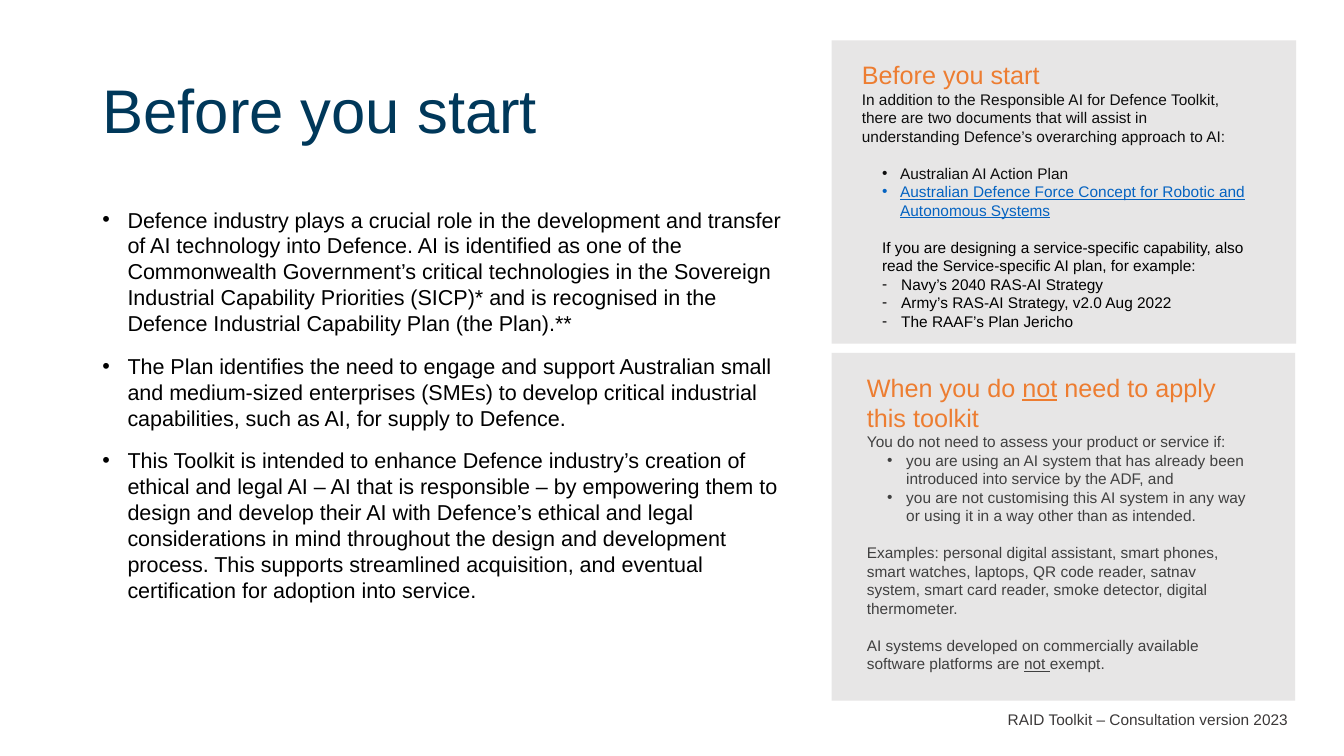
from pptx import Presentation
from pptx import util as u
from pptx.dml.color import RGBColor
from pptx.enum import shapes, text
from pptx.oxml.ns import qn
from lxml import etree

# Grid of 160 columns by 90 rows, with square cells
WIDTH, HEIGHT = u.Inches(13.333), u.Inches(7.5)
CELL = HEIGHT / 90

NAVY, ORANGE, PANEL = "00385A", "ED7D31", "E7E6E6"
BLACK, INK, GREY, FOOTER, LINK = "000000", "0D0D0D", "404040", "3B3838", "0563C1"
BLANK_LINE = {"space_before": u.Pt(13.2)}
NO_MARGINS = dict.fromkeys(
    ("margin_left", "margin_top", "margin_right", "margin_bottom"), 0)


def cells(n):
    return u.Emu(round(n * CELL))


def colour(target, value):
    target.rgb = RGBColor.from_string(value)


def apply(target, values):
    for name, value in values.items():
        setattr(target, name, value)


def indent(p, left, hang=0, bullet=None):
    pPr = p._p.get_or_add_pPr()
    pPr.set("marL", str(cells(left)))
    pPr.set("indent", str(-cells(hang)))
    if bullet:
        etree.SubElement(pPr, qn("a:buFont")).set("typeface", "Arial")
        etree.SubElement(pPr, qn("a:buChar")).set("char", bullet)


def write(tf, paragraphs):
    """Each paragraph is (runs, size, colour, indent, format)."""
    for i, (runs, size, ink, levels, values) in enumerate(paragraphs):
        p = tf.paragraphs[0] if i == 0 else tf.add_paragraph()
        if levels:
            indent(p, *levels)
        apply(p, values)
        for words, underline in [(runs, False)] if isinstance(runs, str) else runs:
            r = p.add_run()
            r.text = words
            apply(r.font, {"name": "Arial", "size": u.Pt(size)})
            if underline:
                r.font.underline = True
            colour(r.font.color, ink)


def add_text(s, place, paragraphs, frame=None):
    tf = s.shapes.add_textbox(*map(cells, place)).text_frame
    apply(tf, {"word_wrap": True, **(frame or {})})
    write(tf, paragraphs)


def add_panel(s, place):
    sp = s.shapes.add_shape(shapes.MSO_SHAPE.RECTANGLE, *map(cells, place))
    sp.shadow.inherit = False
    sp.fill.solid()
    colour(sp.fill.fore_color, PANEL)
    sp.line.fill.background()


def add_title(s, place, words):
    sp = s.shapes.title
    apply(sp, dict(zip(("left", "top", "width", "height"), map(cells, place))))
    apply(sp.text_frame, {"word_wrap": True,
                          "vertical_anchor": text.MSO_ANCHOR.MIDDLE})
    write(sp.text_frame, [(words, 44, NAVY, None, {
        "alignment": text.PP_ALIGN.LEFT, "line_spacing": 0.9})])


def small(runs, ink, levels=None, values=None):
    return runs, 11, ink, levels, values or {}


def main():
    prs = Presentation()
    prs.slide_width, prs.slide_height = WIDTH, HEIGHT
    s = prs.slides.add_slide(prs.slide_layouts[5])

    # Footer and title
    add_text(s, (74.64, 84, 79.92, 3.48), [
        small("RAID Toolkit – Consultation version 2023", FOOTER,
              None, {"alignment": text.PP_ALIGN.RIGHT})])
    add_title(s, (11, 4.8, 138, 17.4), "Before you start")

    # Main points
    points = [
        "Defence industry plays a crucial role in the development and transfer of AI technology into Defence. AI is identified as one of the Commonwealth Government’s critical technologies in the Sovereign Industrial Capability Priorities (SICP)* and is recognised in the Defence Industrial Capability Plan (the Plan).**",
        "The Plan identifies the need to engage and support Australian small and medium-sized enterprises (SMEs) to develop critical industrial capabilities, such as AI, for supply to Defence.",
        "This Toolkit is intended to enhance Defence industry’s creation of ethical and legal AI – AI that is responsible – by empowering them to design and develop their AI with Defence’s ethical and legal considerations in mind throughout the design and development process. This supports streamlined acquisition, and eventual certification for adoption into service.",
    ]
    add_text(s, (11, 24, 84.4, 57.1), [
        (point, 15.4, BLACK, (3, 3, "•"),
         {"space_before": u.Pt(6 if i else 0), "space_after": u.Pt(6)})
        for i, point in enumerate(points)])

    # Side panels
    add_panel(s, (99, 4.8, 55.3, 36.1))
    add_panel(s, (99, 42, 55.2, 41.4))

    # Lower panel: exemptions
    dot = (4.68, 2.28, "•")
    add_text(s, (103.2, 44.3, 45.7, 29.3), [
        ([("When you do ", False), ("not", True),
          (" need to apply this toolkit", False)], 18, ORANGE, None, {}),
        small("You do not need to assess your product or service if:", GREY),
        small("you are using an AI system that has already been introduced into service by the ADF, and", GREY, dot),
        small("you are not customising this AI system in any way or using it in a way other than as intended.", GREY, dot),
        small("Examples: personal digital assistant, smart phones, smart watches, laptops, QR code reader, satnav system, smart card reader, smoke detector, digital thermometer.", GREY, None, BLANK_LINE),
        small([("AI systems developed on commercially available software platforms are ", False),
               ("not ", True), ("exempt.", False)], GREY, None, BLANK_LINE),
    ], NO_MARGINS)

    # Upper panel: further reading
    dot, dash = (4.56, 2.16, "•"), (4.68, 2.28, "-")
    plans = ["Navy’s 2040 RAS-AI Strategy", "Army’s RAS-AI Strategy, v2.0 Aug 2022",
             "The RAAF’s Plan Jericho"]
    add_text(s, (102.6, 7.1, 45.7, 21.8), [
        ("Before you start", 18, ORANGE, None, {}),
        small("In addition to the Responsible AI for Defence Toolkit, there are two documents that will assist in understanding Defence’s overarching approach to AI:", INK),
        small("Australian AI Action Plan", INK, dot, BLANK_LINE),
        small([("Australian Defence Force Concept for Robotic and Autonomous Systems", True)], LINK, dot),
        small("If you are designing a service-specific capability, also read the Service-specific AI plan, for example:", BLACK, (2.4,), BLANK_LINE),
        *[small(plan, BLACK, dash) for plan in plans],
    ], NO_MARGINS)

    prs.save("out.pptx")


if __name__ == "__main__":
    main()
